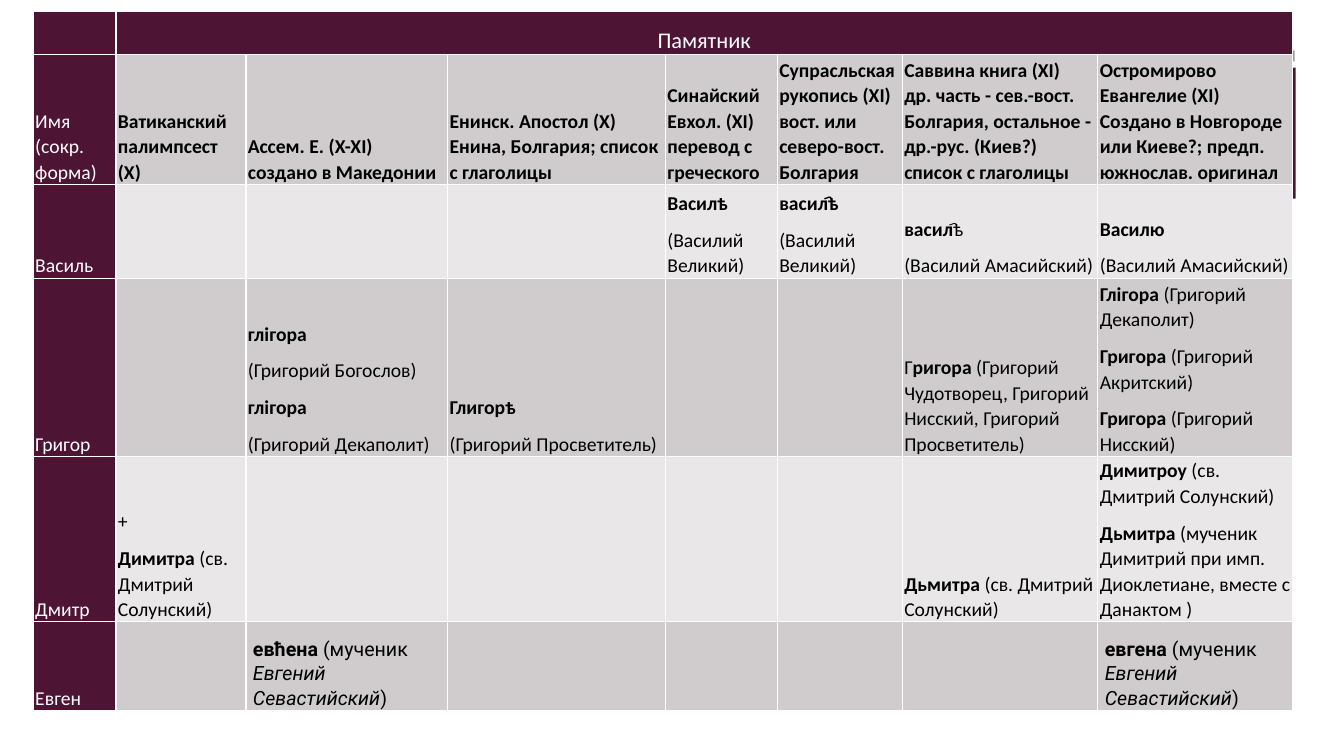
from dataclasses import dataclass

from lxml import etree
from pptx import Presentation
from pptx.dml.color import RGBColor
from pptx.enum.shapes import MSO_SHAPE
from pptx.enum.text import MSO_ANCHOR, PP_ALIGN
from pptx.oxml.ns import qn
from pptx.util import Inches, Pt

RECTANGLE = MSO_SHAPE.RECTANGLE
BOTTOM = MSO_ANCHOR.BOTTOM
CENTER, LEFT = PP_ALIGN.CENTER, PP_ALIGN.LEFT
BLANK_LAYOUT = 6


@dataclass(frozen=True)
class Theme:
    plum: str = "4D1434"
    purple: str = "903163"
    grey: str = "969FA7"
    bands: tuple = ("E9E7E8", "D0CCCE")
    white: str = "FFFFFF"
    black: str = "000000"
    font: str = "Calibri"
    accent_font: str = "Roboto"
    heading_size: int = 16
    body_size: int = 14


theme = Theme()


def set_borders(cell, color, width):
    properties = cell._tc.get_or_add_tcPr()
    for side in ("a:lnL", "a:lnR", "a:lnT", "a:lnB"):
        line = etree.SubElement(properties, qn(side), w=str(Pt(width)))
        fill = etree.SubElement(line, qn("a:solidFill"))
        etree.SubElement(fill, qn("a:srgbClr"), val=color)


def write_marked(paragraph, text, font_name, size, color):
    """Write text in which *stars* mark bold and _underscores_ mark italic."""
    for bold_index, bold_part in enumerate(text.split("*")):
        for italic_index, italic_part in enumerate(bold_part.split("_")):
            for line_index, line in enumerate(italic_part.split("\n")):
                if line_index:
                    paragraph.add_line_break()
                if not line:
                    continue
                run = paragraph.add_run()
                run.text = line
                run.font.name = font_name
                run.font.size = Pt(size)
                run.font.bold = bold_index % 2 == 1
                run.font.italic = italic_index % 2 == 1
                run.font.color.rgb = RGBColor.from_string(color)
    for line_break in paragraph._p.findall(qn("a:br")):
        etree.SubElement(line_break, qn("a:rPr"), sz=str(size * 100))


presentation = Presentation()
presentation.slide_width = Inches(13.33)
presentation.slide_height = Inches(7.5)
slide = presentation.slides.add_slide(presentation.slide_layouts[BLANK_LAYOUT])

# Decorative bars behind the table
bars = [
    (0.49, 0.5, 4.05, 0.1, theme.plum),
    (4.64, 0.5, 4.05, 0.1, theme.purple),
    (8.79, 0.5, 4.05, 0.11, theme.grey),
    (0.48, 0.67, 12.37, 1.3, theme.plum),
]
for left, top, width, height, color in bars:
    bar = slide.shapes.add_shape(
        RECTANGLE, Inches(left), Inches(top), Inches(width), Inches(height))
    bar.shadow.inherit = False
    bar.fill.solid()
    bar.fill.fore_color.rgb = RGBColor.from_string(color)
    bar.line.fill.background()

# Table content: a list of paragraphs in each cell
rows = [
    [[], ["Памятник"], [], [], [], [], [], []],
    [
        ["Имя\n(сокр. форма)"],
        ["*Ватиканский палимпсест (X)*"],
        ["*Ассем. Е. (X-XI)\nсоздано в Македонии*"],
        ["*Енинск. Апостол (X)\nЕнина, Болгария; список с глаголицы*"],
        ["*Синайский Евхол. (XI)\nперевод с греческого*"],
        ["*Супрасльская рукопись (XI)\nвост. или северо-вост. Болгария*"],
        ["*Саввина книга (XI)\nдр. часть - сев.-вост. Болгария, остальное - "
         "др.-рус. (Киев?)\nсписок с глаголицы*"],
        ["*Остромирово Евангелие (XI)\nСоздано в Новгороде или Киеве?; "
         "предп. южнослав. оригинал*"],
    ],
    [
        ["Василь"], [], [], [],
        ["*Василѣ*", "(Василий Великий)"],
        ["*васил҄ѣ*", "(Василий Великий)"],
        ["*васил*҄ѣ", "(Василий Амасийский)"],
        ["*Василю*", "(Василий Амасийский)"],
    ],
    [
        ["Григор"], [],
        ["*глігора*", "(Григорий Богослов)", "*глігора*", "(Григорий Декаполит)"],
        ["*Глигорѣ*", "(Григорий Просветитель)"],
        [], [],
        ["Г*ригора* (Григорий Чудотворец, Григорий Нисский, "
         "Григорий Просветитель)"],
        ["*Глігора* (Григорий Декаполит)", "*Григора* (Григорий Акритский)",
         "*Григора* (Григорий Нисский)"],
    ],
    [
        ["Дмитр"],
        ["+", "*Димитра* (св. Дмитрий Солунский)"],
        [], [], [], [],
        ["*Дьмитра* (св. Дмитрий Солунский)"],
        ["*Димитроу* (св. Дмитрий Солунский)",
         "*Дьмитра* (мученик Димитрий при имп. Диоклетиане, "
         "вместе с Данактом )"],
    ],
    [
        ["Евген"], [],
        ["*евћена* (мученик _Евгений Севастийский_)"],
        [], [], [], [],
        ["*евгена* (мученик _Евгений Севастийский_)"],
    ],
]
column_widths = [0.82, 1.29, 2, 2.16, 1.11, 1.24, 1.94, 1.93]
row_heights = [0.43, 1.29, 0.93, 1.77, 1.64, 0.88]
last_row = len(rows) - 1

# Table grid
table = slide.shapes.add_table(
    len(rows), len(column_widths), Inches(0.33), Inches(0.11),
    Inches(sum(column_widths)), Inches(sum(row_heights))).table
for column, width in zip(table.columns, column_widths):
    column.width = Inches(width)
for table_row, height in zip(table.rows, row_heights):
    table_row.height = Inches(height)
table.cell(0, 1).merge(table.cell(0, len(column_widths) - 1))

# Cell formatting and text
for row_index, row in enumerate(rows):
    for column_index, paragraphs in enumerate(row):
        cell = table.cell(row_index, column_index)
        is_header = row_index == 0 or column_index == 0
        is_accent = row_index == last_row and not is_header
        set_borders(cell, theme.white, 1)
        cell.fill.solid()
        cell.fill.fore_color.rgb = RGBColor.from_string(
            theme.plum if is_header else theme.bands[row_index % 2])
        cell.vertical_anchor = BOTTOM
        cell.margin_left = cell.margin_right = Inches(0.07 if is_accent else 0.02)
        cell.margin_top = cell.margin_bottom = 0
        for index, text in enumerate(paragraphs):
            text_frame = cell.text_frame
            paragraph = text_frame.add_paragraph() if index else text_frame.paragraphs[0]
            paragraph.alignment = CENTER if row_index == 0 else LEFT
            paragraph.line_spacing = 1.07
            paragraph.space_after = Pt(8)
            write_marked(
                paragraph, text,
                theme.accent_font if is_accent else theme.font,
                theme.heading_size if row_index == 0 else theme.body_size,
                theme.white if is_header else theme.black)

presentation.save("out.pptx")
